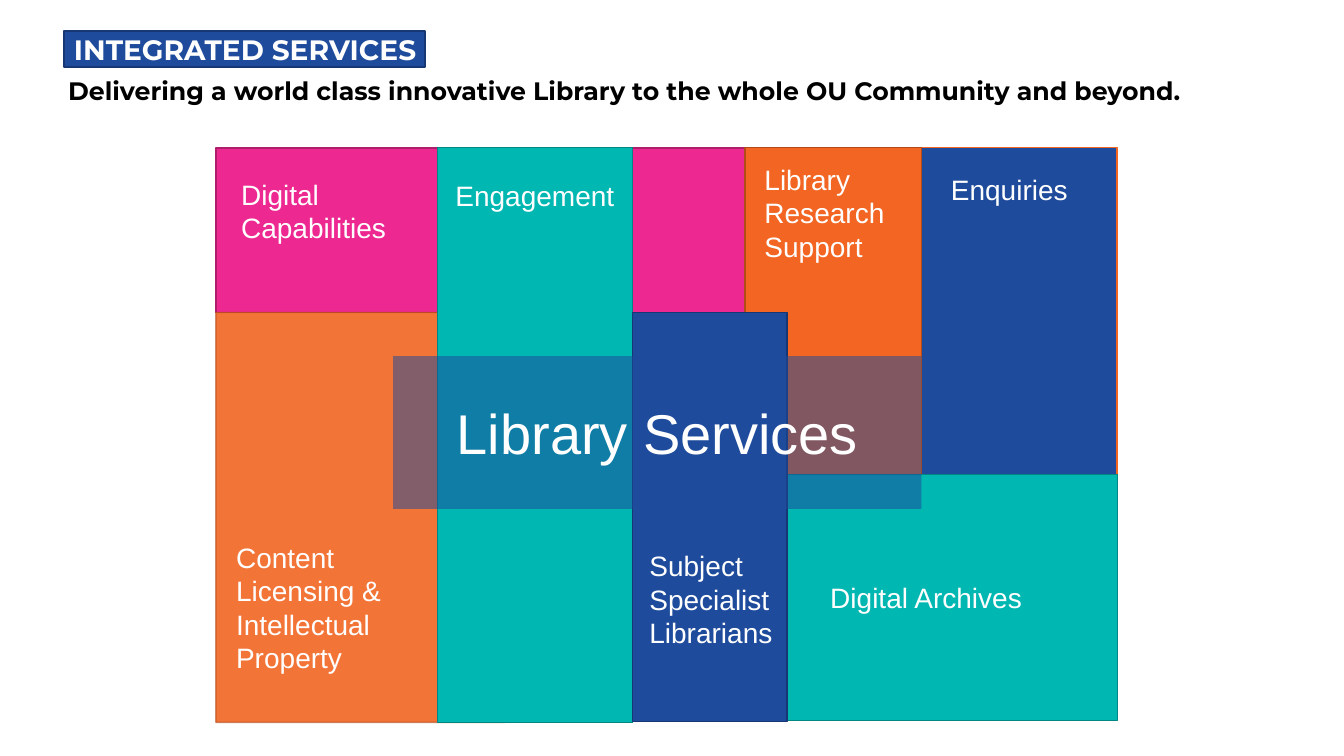
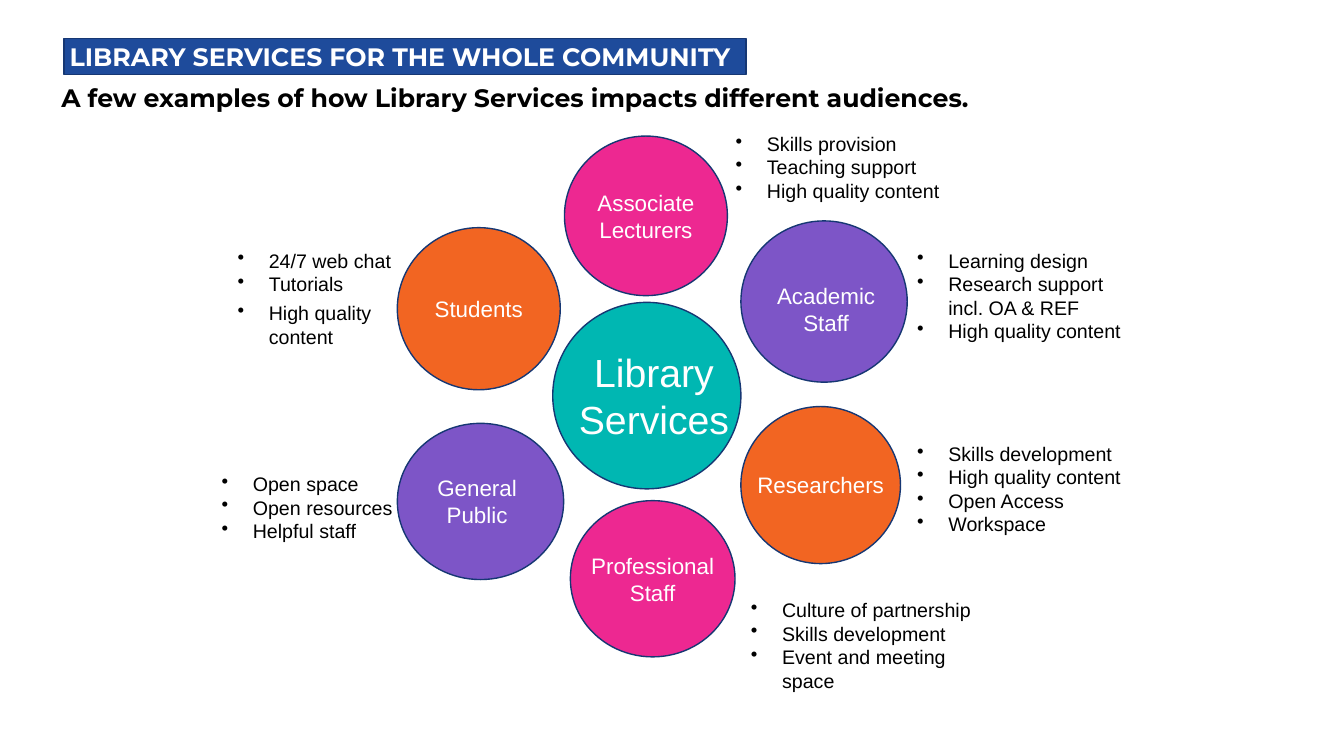
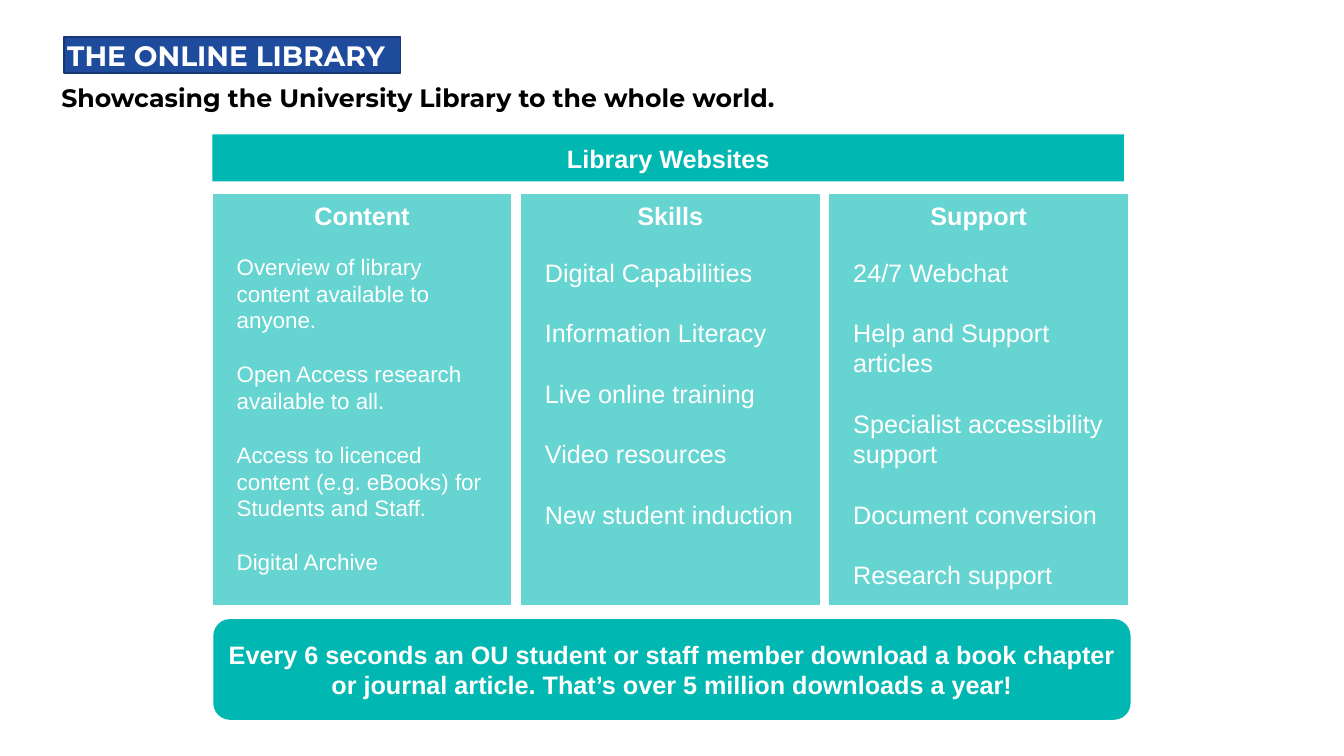
from dataclasses import dataclass
from typing import NamedTuple, Optional

from lxml import etree
from pptx import Presentation
from pptx import util as u
from pptx.dml.color import RGBColor
from pptx.enum import shapes, text
from pptx.oxml.ns import qn

# Shared look: every length is a count of square cells on a 160 x 90 grid
SLIDE_W, SLIDE_H = u.Inches(13.333), u.Inches(7.5)
CELL = SLIDE_H / 90
COLOURS = {
    "blue": "1E4B9B", "navy": "163773", "pink": "ED2891", "plum": "AF1E6B",
    "orange": "F26522", "rust": "B34B19", "teal": "00B7B2", "pine": "008784",
    "aqua": "66D4D1", "purple": "7D55C7", "white": "FFFFFF", "black": "000000",
}
BODY_FONT, HEAD_FONT = "Arial", "Montserrat"
LINE_HEIGHT = 1.2
RECT = shapes.MSO_SHAPE.RECTANGLE
LEFT, CENTER = text.PP_ALIGN.LEFT, text.PP_ALIGN.CENTER
TOP, MIDDLE = text.MSO_ANCHOR.TOP, text.MSO_ANCHOR.MIDDLE


class Box(NamedTuple):
    left: float
    top: float
    width: float
    height: float


class Insets(NamedTuple):
    left: float = 1.2
    top: float = 0.6
    right: float = 1.2
    bottom: float = 0.6


@dataclass
class Heading:
    title: str
    tagline: str
    band: Box
    title_inset: float
    size: int = 20
    tagline_box: Box = Box(6.8, 10, 129.8, 3.4)


@dataclass
class Block:
    box: Box
    fill: str
    outline: Optional[str]
    label: str
    label_at: Optional[tuple[float, float, float]] = None  # left, top, width
    alphas: tuple[int, ...] = ()
    size: int = 20


@dataclass
class Audience:
    name: str
    circle: Box
    fill: str
    benefits: tuple[str, ...] = ()
    benefits_box: Optional[Box] = None
    size: int = 16
    insets: Insets = Insets(0, 0, 0, 0)


@dataclass
class Website:
    name: str
    items: tuple[str, ...]
    size: int = 18
    list_top: float = 30


# Helpers
def cells(count: float) -> int:
    return u.Emu(round(count * CELL))


def colour(name: str) -> RGBColor:
    return RGBColor.from_string(COLOURS[name])


def place(shape, box: Box) -> None:
    shape.left, shape.top, shape.width, shape.height = map(cells, box)


def paint(shape, fill: str, outline: Optional[str] = None) -> None:
    shape.fill.solid()
    shape.fill.fore_color.rgb = colour(fill)
    if outline:
        shape.line.color.rgb = colour(outline)
        shape.line.width = u.Pt(1)
    else:
        shape.line.fill.background()


def write(shape, words: str, size: int, ink: str = "white", bold: bool = False,
          font: str = BODY_FONT, align=LEFT, anchor=TOP,
          insets: Insets = Insets(), wrap: bool = True):
    frame = shape.text_frame
    frame.text = words
    frame.word_wrap = wrap
    frame.auto_size = text.MSO_AUTO_SIZE.NONE
    frame.vertical_anchor = anchor
    (frame.margin_left, frame.margin_top,
     frame.margin_right, frame.margin_bottom) = map(cells, insets)
    for paragraph in frame.paragraphs:
        paragraph.alignment = align
        paragraph.space_before = u.Pt(0)
        for run in paragraph.runs:
            run.font.name, run.font.size, run.font.bold = font, u.Pt(size), bold
            run.font.color.rgb = colour(ink)
    return frame


def add_panel(slide, box: Box, fill: str, outline: Optional[str] = None, kind=RECT):
    panel = slide.shapes.add_shape(kind, *map(cells, box))
    panel.shadow.inherit = False
    paint(panel, fill, outline)
    return panel


def add_text(slide, box: Box, words: str, size: int, ink: str):
    return write(slide.shapes.add_textbox(*map(cells, box)), words, size, ink)


def set_alphas(shape, alphas: tuple[int, ...]) -> None:
    """Opacity in percent for the fill, then for the line."""
    tints = list(shape._element.spPr.iter(qn("a:srgbClr")))
    for tint, alpha in zip(tints, alphas):
        etree.SubElement(tint, qn("a:alpha")).set("val", str(alpha * 1000))


def add_bullets(frame) -> None:
    for paragraph in frame.paragraphs:
        props = paragraph._p.get_or_add_pPr()
        props.set("marL", str(u.Inches(0.31)))
        props.set("indent", str(-u.Inches(0.31)))
        etree.SubElement(props, qn("a:buChar")).set("char", "•")


def start_slide(deck, heading: Heading):
    slide = deck.slides.add_slide(deck.slide_layouts[2])
    title, tagline = slide.shapes.title, slide.placeholders[1]
    place(title, heading.band)
    paint(title, "blue", "navy")
    write(title, heading.title, heading.size, bold=True, font=HEAD_FONT,
          anchor=MIDDLE, insets=Insets(heading.title_inset, 0, 0, 0))
    place(tagline, heading.tagline_box)
    frame = write(tagline, heading.tagline, 18, "black", True, HEAD_FONT,
                  anchor=MIDDLE, insets=Insets(0.5, 0.2, 0, 0))
    frame.paragraphs[0].line_spacing = 0.9
    return slide


# Slide 1: mosaic of teams
INTEGRATED = Heading(
    "INTEGRATED SERVICES",
    "Delivering a world class innovative Library to the whole OU Community and beyond.",
    Box(7.6, 3.7, 43, 4.3), 1.2, tagline_box=Box(7.6, 8.4, 143.3, 4.9))
TEAMS = [
    Block(Box(109.7, 17.6, 23.3, 38.9), "blue", "orange", "Enquiries", (3.5, 2.9, 14)),
    Block(Box(25.7, 17.6, 84, 19.6), "pink", "plum", "Digital Capabilities",
          (3, 3.5, 18.6)),
    Block(Box(25.7, 37.2, 34.4, 48.8), "orange", "rust",
          "Content Licensing & Intellectual Property", (2.4, 27.1, 17.8), (90, 62)),
    Block(Box(88.7, 17.6, 21, 68.2), "orange", "rust", "Library Research Support",
          (2.3, 1.7, 17.5)),
    Block(Box(52.1, 17.6, 23.2, 68.4), "teal", "pine", "Engagement", (2.1, 3.6, 21)),
    Block(Box(87.5, 56.5, 45.5, 29.3), "teal", "pine", "Digital Archives"),
    Block(Box(75.3, 37.2, 18.4, 48.7), "blue", "navy",
          "Subject Specialist Librarians", (2, 28.1, 16.4)),
    Block(Box(46.8, 42.4, 62.9, 18.2), "blue", None, "Library Services",
          alphas=(53,), size=40),
]


def add_block(slide, block: Block) -> None:
    panel = add_panel(slide, block.box, block.fill, block.outline)
    set_alphas(panel, block.alphas)
    if block.label_at:
        left, top, width = block.label_at
        insets = Insets(left, top, block.box.width - left - width, 0)
        write(panel, block.label, block.size, insets=insets)
    else:
        write(panel, block.label, block.size, align=CENTER, anchor=MIDDLE)


def build_integrated(deck) -> None:
    slide = start_slide(deck, INTEGRATED)
    for team in TEAMS:
        add_block(slide, team)


# Slide 2: audiences around the library
COMMUNITY = Heading(
    "LIBRARY SERVICES FOR THE WHOLE COMMUNITY",
    "A few examples of how Library Services impacts different audiences.",
    Box(7.6, 4.6, 81.2, 4.3), 0.7, size=18)
AUDIENCES = [
    Audience("Library\nServices", Box(65.8, 36, 22.4, 22.2), "teal", size=28,
             insets=Insets(1.7, 0, 0, 0)),
    Audience("Professional\nStaff", Box(67.9, 59.6, 19.6, 18.6), "pink",
             ("Culture of partnership", "Skills development",
              "Event and meeting space"), Box(88.2, 70.6, 30.6, 12.5)),
    Audience("Students", Box(47.3, 27.1, 19.4, 19.3), "orange",
             ("24/7 web chat", "Tutorials", "High quality content"),
             Box(27.1, 29, 21.7, 13.3)),
    Audience("Associate\nLecturers", Box(67.2, 16.2, 19.4, 19), "pink",
             ("Skills provision", "Teaching support", "High quality content"),
             Box(86.4, 15.1, 30, 9.7)),
    Audience("Academic\nStaff", Box(88.2, 26.3, 19.8, 19.2), "purple",
             ("Learning design", "Research support incl. OA & REF",
              "High quality content"), Box(108, 29, 27.6, 12.5),
             insets=Insets(0.5, 1.7, 0, 0)),
    Audience("Researchers", Box(88.2, 48.4, 19, 18.7), "orange",
             ("Skills development", "High quality content", "Open Access",
              "Workspace"), Box(108, 52, 29.5, 12.5)),
    Audience("General\nPublic", Box(47.3, 50.4, 19.8, 18.6), "purple",
             ("Open space", "Open resources", "Helpful staff"),
             Box(25.2, 55.6, 30, 9.7), insets=Insets(0, 0, 0.8, 0)),
]


def add_audience(slide, audience: Audience) -> None:
    circle = add_panel(slide, audience.circle, audience.fill, "navy",
                       shapes.MSO_SHAPE.OVAL)
    write(circle, audience.name, audience.size, align=CENTER, anchor=MIDDLE,
          insets=audience.insets, wrap=False)
    if audience.benefits_box:
        benefits = add_text(slide, audience.benefits_box,
                            "\n".join(audience.benefits), 14, "black")
        add_bullets(benefits)
        if audience.name == "Students":
            benefits.paragraphs[-1].space_before = u.Pt(4)


def build_community(deck) -> None:
    slide = start_slide(deck, COMMUNITY)
    for audience in AUDIENCES:
        add_audience(slide, audience)


# Slide 3: columns of the online library
ONLINE = Heading("THE ONLINE LIBRARY",
                 "Showcasing the University Library to the whole world.",
                 Box(7.6, 4.4, 40.1, 4.3), 0.4)
WEBSITES = [
    Website("Content", (
        "Overview of library content available to anyone.",
        "Open Access research available to all.",
        "Access to licenced content (e.g. eBooks) for Students and Staff.",
        "Digital Archive"), 16, 29.5),
    Website("Skills", (
        "Digital Capabilities", "Information Literacy", "Live online training",
        "Video resources", "New student induction")),
    Website("Support", (
        "24/7 Webchat", "Help and Support articles",
        "Specialist accessibility support", "Document conversion",
        "Research support")),
]
FACT = ("Every 6 seconds an OU student or staff member download a book chapter "
        "or journal article. That’s over 5 million downloads a year!")
FIRST_COLUMN = Box(25.4, 23.2, 35.4, 48.8)
COLUMN_PITCH = 36.7


def add_website(slide, index: int, website: Website) -> None:
    column = FIRST_COLUMN._replace(left=FIRST_COLUMN.left + index * COLUMN_PITCH)
    panel = add_panel(slide, column, "aqua", "aqua")
    write(panel, website.name, 18, bold=True, align=CENTER)
    items = add_text(slide, Box(column.left + 1.6, website.list_top, 32.4, 40.5),
                     "\n".join(website.items), website.size, "white")
    for item in items.paragraphs[1:]:
        item.space_before = u.Pt(round(website.size * LINE_HEIGHT, 1))


def build_online(deck) -> None:
    slide = start_slide(deck, ONLINE)
    header = add_panel(slide, Box(25.3, 16, 108.5, 5.6), "teal")
    write(header, "Library Websites", 18, bold=True, align=CENTER, anchor=MIDDLE)
    for index, website in enumerate(WEBSITES):
        add_website(slide, index, website)
    fact = add_panel(slide, Box(25.4, 73.7, 109.2, 12), "teal",
                     kind=shapes.MSO_SHAPE.ROUNDED_RECTANGLE)
    write(fact, FACT, 18, bold=True, align=CENTER, anchor=MIDDLE)


def main() -> None:
    deck = Presentation()
    deck.slide_width, deck.slide_height = SLIDE_W, SLIDE_H
    for build in (build_integrated, build_community, build_online):
        build(deck)
    deck.save("out.pptx")


if __name__ == "__main__":
    main()
